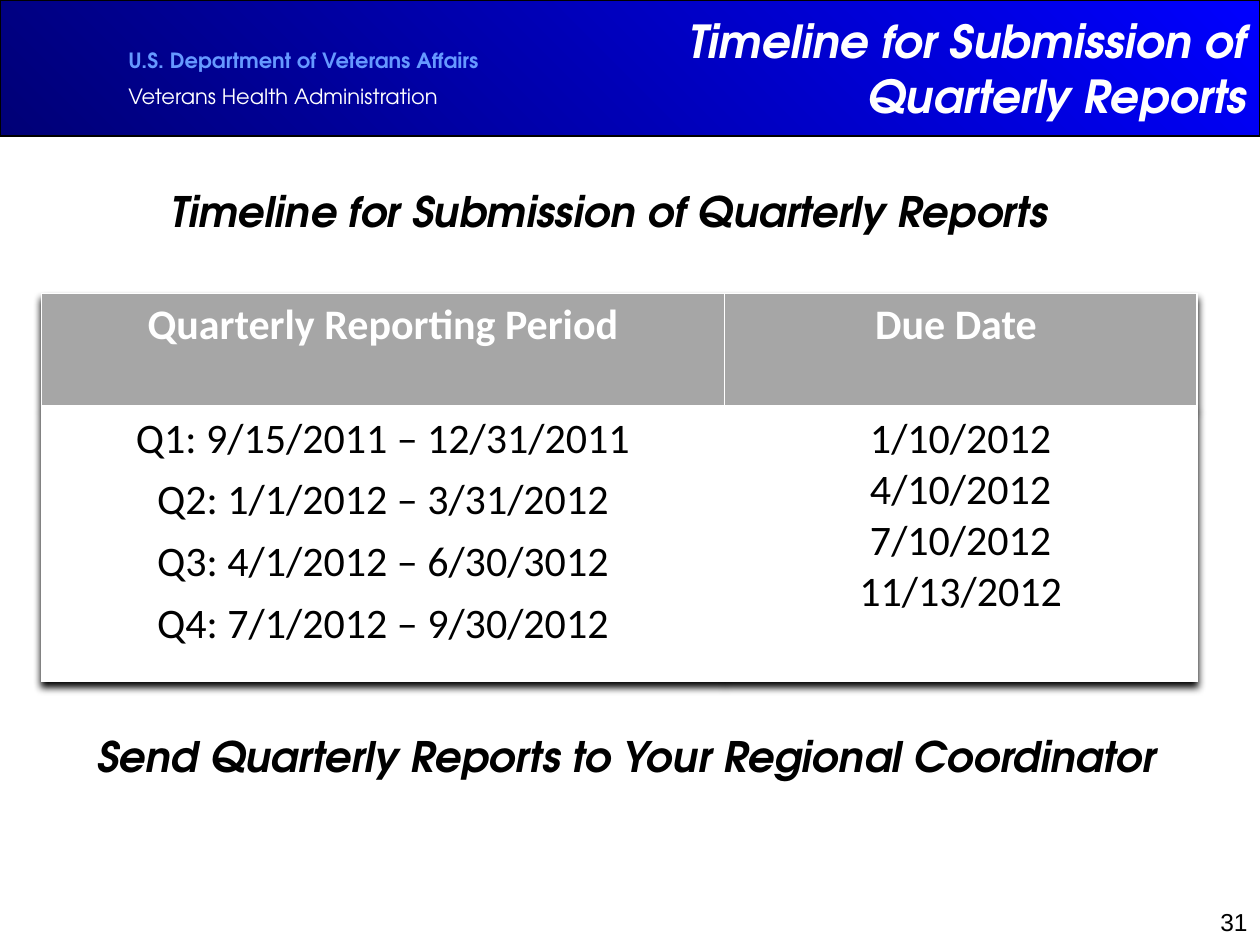
from dataclasses import dataclass
from typing import Any

import lxml.etree
import pptx
import pptx.dml.color
import pptx.enum.text
import pptx.oxml.ns
import pptx.util

Inches = pptx.util.Inches
Pt = pptx.util.Pt
Color = pptx.dml.color.RGBColor
Align = pptx.enum.text.PP_ALIGN
Anchor = pptx.enum.text.MSO_ANCHOR
qn = pptx.oxml.ns.qn


@dataclass(frozen=True)
class Theme:
    display: str = "TeX Gyre Adventor"
    table: str = "Calibri"
    number: str = "Arial"
    white: str = "FFFFFF"
    black: str = "000000"
    gray: str = "A6A6A6"
    light_blue: str = "6699FF"
    band_start: str = "000076"
    band_end: str = "0000FF"
    title_size: float = 26
    body_size: float = 24
    number_size: float = 14
    agency_size: float = 12


@dataclass(frozen=True)
class Style:
    font: str
    size: float
    color: str
    bold: bool = False
    italic: bool = False
    align: Any = Align.LEFT
    margin: float = 0
    indent: float = 0


@dataclass(frozen=True)
class TableCell:
    lines: tuple[str, ...]
    style: Style
    fill: str
    gap: float
    top_line: float
    bottom_line: float


THEME = Theme()
TITLE = Style(THEME.display, THEME.title_size, THEME.white, True, True, Align.RIGHT, 0.94, -0.94)
HEADING = Style(THEME.display, THEME.body_size, THEME.black, True, True, Align.CENTER)
SEND_LINE = Style(THEME.display, THEME.body_size, THEME.black, True, True, margin=0.59)
AGENCY = Style(THEME.display, THEME.agency_size, THEME.light_blue, True)
ADMINISTRATION = Style(THEME.display, THEME.agency_size, THEME.white)
NUMBER = Style(THEME.number, THEME.number_size, THEME.black, align=Align.RIGHT)
TABLE_HEAD = Style(THEME.table, THEME.body_size, THEME.white, True, align=Align.CENTER)
TABLE_BODY = Style(THEME.table, THEME.body_size, THEME.black, align=Align.CENTER)

PERIODS = (
    "Q1: 9/15/2011 – 12/31/2011",
    "Q2: 1/1/2012 – 3/31/2012",
    "Q3: 4/1/2012 – 6/30/3012",
    "Q4: 7/1/2012 – 9/30/2012",
)
DUE_DATES = ("1/10/2012", "4/10/2012", "7/10/2012", "11/13/2012")
TABLE_ROWS = (
    tuple(
        TableCell((text,), TABLE_HEAD, THEME.gray, 0, 1, 3)
        for text in ("Quarterly Reporting Period", "Due Date ")
    ),
    tuple(
        TableCell(lines, TABLE_BODY, THEME.white, gap, 3, 1)
        for lines, gap in ((PERIODS, 6), (DUE_DATES, 0))
    ),
)


def apply_values(target: Any, values: dict[str, Any]) -> None:
    for name, value in values.items():
        setattr(target, name, value)


def place(shape: Any, left: float, top: float, width: float, height: float) -> None:
    lengths = {"left": left, "top": top, "width": width, "height": height}
    apply_values(shape, {name: Inches(value) for name, value in lengths.items()})


def write_lines(frame: Any, lines: list[tuple[str, Style]], gap: float = 0) -> None:
    for index, (text, style) in enumerate(lines):
        paragraph = frame.paragraphs[0] if index == 0 else frame.add_paragraph()
        properties = paragraph._p.get_or_add_pPr()
        properties.set("marL", str(Inches(style.margin)))
        properties.set("indent", str(Inches(style.indent)))
        lxml.etree.SubElement(properties, qn("a:buNone"))
        paragraph.alignment = style.align
        paragraph.space_before = Pt(gap if index else 0)
        run = paragraph.add_run()
        run.text = text
        apply_values(run.font, {
            "name": style.font,
            "size": Pt(style.size),
            "bold": style.bold,
            "italic": style.italic,
        })
        run.font.color.rgb = Color.from_string(style.color)


def fill_frame(shape: Any, lines: list[tuple[str, Style]], anchor: Any = Anchor.TOP, gap: float = 0) -> None:
    apply_values(shape.text_frame, {
        "word_wrap": True,
        "auto_size": pptx.enum.text.MSO_AUTO_SIZE.NONE,
        "vertical_anchor": anchor,
    })
    write_lines(shape.text_frame, lines, gap)


def add_band(slide: Any) -> None:
    band = slide.shapes.add_shape(
        pptx.enum.shapes.MSO_SHAPE.RECTANGLE, 0, 0, Inches(10), Inches(1.08)
    )
    band.shadow.inherit = False
    band.fill.gradient()
    band.fill.gradient_angle = 45
    for stop, color in zip(band.fill.gradient_stops, (THEME.band_start, THEME.band_end)):
        stop.color.rgb = Color.from_string(color)
    band.line.color.rgb = Color.from_string(THEME.black)
    band.line.width = Pt(0.75)
    slide.shapes._spTree.insert(2, band._element)


def add_text(slide: Any, box: tuple[float, ...], lines: list[tuple[str, Style]], gap: float = 0) -> None:
    fill_frame(slide.shapes.add_textbox(*map(Inches, box)), lines, gap=gap)


def add_solid_color(parent: Any, color: str) -> None:
    fill = lxml.etree.SubElement(parent, qn("a:solidFill"))
    lxml.etree.SubElement(fill, qn("a:srgbClr"), val=color)


def add_borders(cell: Any, top: float, bottom: float) -> None:
    properties = cell._tc.get_or_add_tcPr()
    for side, width in (("lnL", 1), ("lnR", 1), ("lnT", top), ("lnB", bottom)):
        line = lxml.etree.SubElement(properties, qn(f"a:{side}"), w=str(Pt(width)))
        add_solid_color(line, THEME.white)


def add_table_shadow(table: Any) -> None:
    effects = lxml.etree.Element(qn("a:effectLst"))
    shadow = lxml.etree.SubElement(
        effects, qn("a:outerShdw"),
        blurRad=str(Pt(4)), dist=str(Pt(3)), dir="5400000", algn="t", rotWithShape="0",
    )
    lxml.etree.SubElement(shadow, qn("a:srgbClr"), val=THEME.black)
    table._tbl.tblPr.insert(0, effects)


def add_schedule(slide: Any) -> None:
    table = slide.shapes.add_table(2, 2, *map(Inches, (0.33, 2.33, 9.17, 3.08))).table
    table.horz_banding = False
    for column, width in zip(table.columns, (5.42, 3.75)):
        column.width = Inches(width)
    for row, height in zip(table.rows, (0.9, 2.18)):
        row.height = Inches(height)
    for row, contents in zip(table.rows, TABLE_ROWS):
        for cell, content in zip(row.cells, contents):
            add_borders(cell, content.top_line, content.bottom_line)
            cell.fill.solid()
            cell.fill.fore_color.rgb = Color.from_string(content.fill)
            write_lines(cell.text_frame, [(line, content.style) for line in content.lines], content.gap)
    add_table_shadow(table)


def main() -> None:
    presentation = pptx.Presentation()
    apply_values(presentation, {"slide_width": Inches(10), "slide_height": Inches(7.5)})
    slide = presentation.slides.add_slide(presentation.slide_layouts.get_by_name("Two Content"))
    title, heading, send_line = slide.placeholders
    add_band(slide)
    place(title, 4, 0, 6, 1.08)
    fill_frame(title, [("Timeline for Submission of Quarterly Reports", TITLE)], Anchor.MIDDLE)
    place(heading, 0.5, 1.42, 8.67, 0.5)
    fill_frame(heading, [("Timeline for Submission of Quarterly Reports", HEADING)])
    place(send_line, 0.08, 5.75, 9.5, 0.5)
    fill_frame(send_line, [("Send Quarterly Reports to Your Regional Coordinator", SEND_LINE)])
    add_text(slide, (0.92, 0.33, 4, 0.6), [
        ("U.S. Department of Veterans Affairs", AGENCY),
        ("Veterans Health Administration", ADMINISTRATION),
    ], gap=6)
    add_schedule(slide)
    add_text(slide, (7.92, 7.15, 2.08, 0.35), [("31", NUMBER)])
    presentation.save("out.pptx")


if __name__ == "__main__":
    main()
